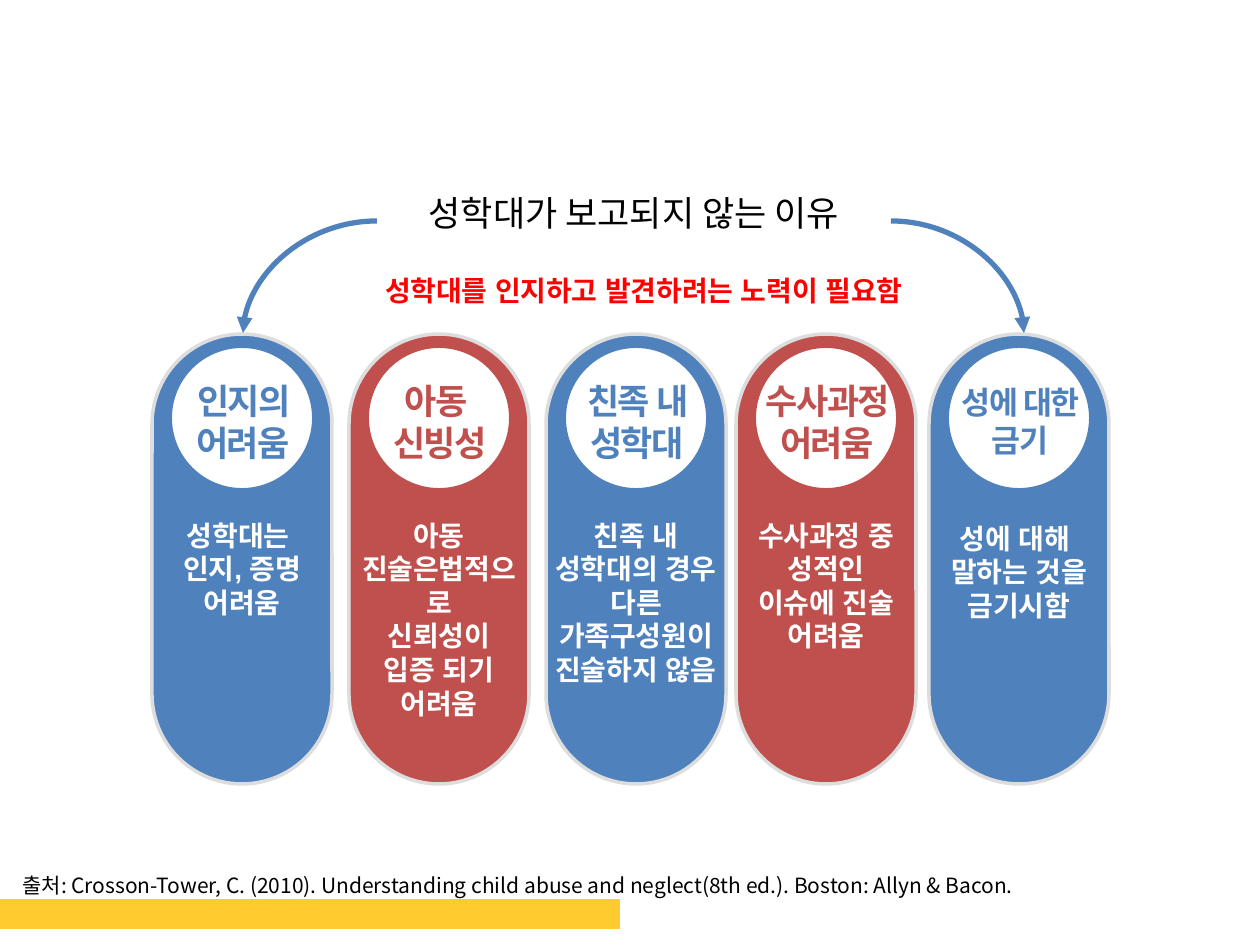
from lxml import etree
from pptx import Presentation
from pptx.dml.color import RGBColor
from pptx.enum.shapes import MSO_CONNECTOR as Connector, MSO_SHAPE as Shape
from pptx.enum.text import PP_ALIGN as Align
from pptx.oxml.ns import qn
from pptx.util import Pt

EMU_PER_PX = 914400 / 126
BLUE = RGBColor(0x4F, 0x81, 0xBD)
BRICK = RGBColor(0xC0, 0x50, 0x4D)
GRAY = RGBColor(0xDD, 0xDD, 0xDD)
YELLOW = RGBColor(0xFF, 0xC0, 0x00)
RED = RGBColor(0xFF, 0x00, 0x00)
WHITE = RGBColor(0xFF, 0xFF, 0xFF)
BLACK = RGBColor(0x00, 0x00, 0x00)
LATIN_FONT = "Arial"
KOREAN_FONT = "Noto Sans CJK KR"

PILL_TOP, PILL_WIDTH, PILL_HEIGHT = 334, 180, 450
CIRCLE_TOP, CIRCLE_SIZE = 346, 144

# left, colour, heading, heading width, top and size, body, body width and top
REASONS = [
    (152, BLUE, ["인지의 어려움"], 154, 373, 20,
     ["성학대는 ", "인지, 증명 어려움"], 180, 512),
    (349, BRICK, ["아동 ", "신빙성"], 154, 373, 20,
     ["아동 진술은법적으로", "신뢰성이", "입증 되기", "어려움"], 180, 512),
    (546, BLUE, ["친족 내 성학대"], 154, 373, 20,
     ["친족 내", "성학대의 경우 다른 가족구성원이 진술하지 않음"], 205, 512),
    (736, BRICK, ["수사과정 어려움"], 181, 373, 20,
     ["수사과정 중 성적인 이슈에 진술", "어려움"], 180, 512),
    (929, BLUE, ["성에 대한 금기"], 179, 377, 18,
     ["성에 대해 ", "말하는 것을 금기시함"], 205, 515),
]


def px(length):
    return round(length * EMU_PER_PX)


class SlideBuilder:
    def __init__(self, slide):
        self.slide = slide

    def shape(self, kind, left, top, width, height, fill, line=None, line_width=0):
        shape = self.slide.shapes.add_shape(
            kind, px(left), px(top), px(width), px(height))
        shape.shadow.inherit = False
        shape.fill.solid()
        shape.fill.fore_color.rgb = fill
        if line is None:
            shape.line.fill.background()
        else:
            shape.line.color.rgb = line
            shape.line.width = Pt(line_width)
        return shape

    def text(self, left, top, width, height, lines, size, color, bold=False,
             font_name=LATIN_FONT, align=Align.CENTER, spacing=0):
        """Add a wrapped text box; spacing is between letters, in points."""
        box = self.slide.shapes.add_textbox(
            px(left), px(top), px(width), px(height))
        frame = box.text_frame
        frame.word_wrap = True
        frame.text = "\n".join(lines)
        for paragraph in frame.paragraphs:
            paragraph.alignment = align
            font = paragraph.font
            font.size, font.bold, font.name = Pt(size), bold, font_name
            font.color.rgb = color
            properties = font._rPr
            etree.SubElement(properties, qn("a:ea"), typeface=font_name)
            if spacing:
                properties.set("spc", str(spacing * 100))

    def curved_arrow(self, start, end):
        """Add a quarter curve that leaves sideways and arrives downwards."""
        connector = self.slide.shapes.add_connector(
            Connector.CURVE, *map(px, start + end))
        connector.line.color.rgb = BLUE
        connector.line.width = Pt(3)
        properties = connector._element.spPr
        properties.find(qn("a:prstGeom")).set("prst", "curvedConnector2")
        etree.SubElement(properties.find(qn("a:ln")), qn("a:tailEnd"), type="triangle")
        etree.SubElement(properties, qn("a:effectLst"))

    def reason(self, left, color, heading, heading_width, heading_top, heading_size,
               body, body_width, body_top):
        """Add one pill with its circled heading and its explanation."""
        center = left + PILL_WIDTH / 2
        pill = self.shape(Shape.ROUNDED_RECTANGLE, left, PILL_TOP,
                          PILL_WIDTH, PILL_HEIGHT, color, GRAY, 2)
        pill.adjustments[0] = 0.5
        self.shape(Shape.OVAL, center - CIRCLE_SIZE / 2, CIRCLE_TOP,
                   CIRCLE_SIZE, CIRCLE_SIZE, WHITE, color, 2.25)
        self.text(center + 1 - heading_width / 2, heading_top, heading_width, 97,
                  heading, heading_size, color, bold=True, spacing=-1)
        self.text(center - body_width / 2, body_top, body_width, 183,
                  body, 16, WHITE, bold=True)


def main():
    presentation = Presentation()
    presentation.slide_width, presentation.slide_height = px(1260), px(945)
    slide = presentation.slides.add_slide(presentation.slide_layouts[6])
    builder = SlideBuilder(slide)

    band = builder.shape(Shape.RECTANGLE, 0, 899, 620, 30, YELLOW)
    color_element = band._element.spPr.find(qn("a:solidFill"))[0]
    etree.SubElement(color_element, qn("a:alpha"), val="82000")

    for reason in REASONS:
        builder.reason(*reason)

    builder.text(377, 185, 514, 55, ["성학대가 보고되지 않는 이유"], 20, BLACK,
                 font_name=KOREAN_FONT)
    builder.text(331, 267, 626, 47, ["성학대를 인지하고 발견하려는 노력이 필요함"],
                 16, RED, bold=True)
    builder.curved_arrow((377, 221), (243, 333))
    builder.curved_arrow((891, 221), (1024, 333))
    builder.text(10, 866, 1126, 39,
                 ["출처: Crosson-Tower, C. (2010). Understanding child abuse and "
                  "neglect(8th ed.). Boston: Allyn & Bacon."],
                 12, BLACK, font_name=KOREAN_FONT, align=Align.LEFT)

    presentation.save("out.pptx")


if __name__ == "__main__":
    main()
